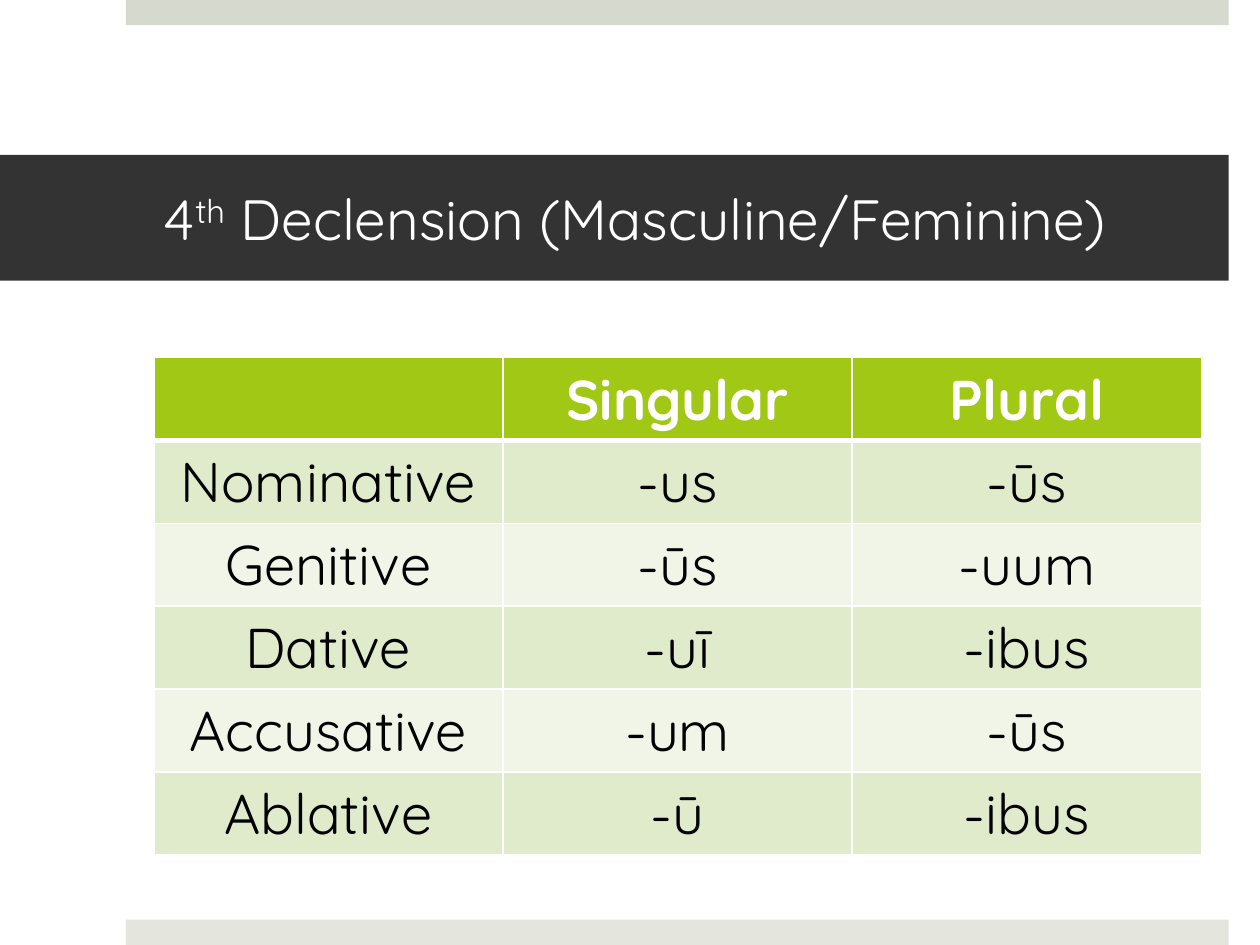
import dataclasses

import lxml.etree
import pptx
import pptx.dml.color
import pptx.enum.shapes
import pptx.enum.text
import pptx.oxml.ns
import pptx.util

Cm = pptx.util.Cm
Pt = pptx.util.Pt
RGBColor = pptx.dml.color.RGBColor
ALIGN = pptx.enum.text.PP_ALIGN
MIDDLE = pptx.enum.text.MSO_ANCHOR.MIDDLE

FONT = "Quicksand"
WHITE = RGBColor(0xFF, 0xFF, 0xFF)
BLACK = RGBColor(0x00, 0x00, 0x00)
CHARCOAL = RGBColor(0x33, 0x33, 0x33)
TOP_GREY = RGBColor(0xD6, 0xD9, 0xCD)
BOTTOM_GREY = RGBColor(0xE4, 0xE6, 0xDE)
LIME = RGBColor(0xA2, 0xC8, 0x16)
BANDS = (RGBColor(0xE0, 0xEB, 0xCC), RGBColor(0xF0, 0xF5, 0xE8))

COLUMN_WIDTH = Cm(7.04)
ROW_HEIGHT = Cm(1.67)
DECLENSION = [
    ("", "Singular", "Plural"),
    ("Nominative", "-us", "-ūs"),
    ("Genitive", "-ūs", "-uum"),
    ("Dative", "-uī", "-ibus"),
    ("Accusative", "-um", "-ūs"),
    ("Ablative", "-ū", "-ibus"),
]


@dataclasses.dataclass(frozen=True)
class Bar:
    top: pptx.util.Length
    color: RGBColor


BARS = [Bar(Cm(0), TOP_GREY), Bar(Cm(18.54), BOTTOM_GREY)]


def add_text(paragraph, text: str, *, size: float, color: RGBColor,
             bold: bool = False, align=ALIGN.LEFT, raised: int = 0) -> None:
    """Append a run; raised is the superscript offset in percent."""
    paragraph.alignment = align
    run = paragraph.add_run()
    run.text = text
    run.font.name = FONT
    run.font.size = Pt(size)
    run.font.bold = bold
    run.font.color.rgb = color
    if raised:
        run.font._element.set("baseline", str(raised * 1000))


def draw_bar(slide, bar: Bar) -> None:
    strip = slide.shapes.add_shape(pptx.enum.shapes.MSO_SHAPE.RECTANGLE,
                                   Cm(2.54), bar.top, Cm(22.23), Cm(0.51))
    strip.shadow.inherit = False
    strip.fill.solid()
    strip.fill.fore_color.rgb = bar.color
    strip.line.fill.background()


def draw_title(slide) -> None:
    title = slide.shapes.title
    title.left, title.top, title.width, title.height = Cm(0), Cm(3.12), Cm(24.77), Cm(2.54)
    title.fill.solid()
    title.fill.fore_color.rgb = CHARCOAL
    frame = title.text_frame
    frame.word_wrap = True
    frame.auto_size = pptx.enum.text.MSO_AUTO_SIZE.NONE
    frame.vertical_anchor = MIDDLE
    frame.margin_left, frame.margin_right = Cm(3.3), Cm(0.76)
    frame.margin_top = frame.margin_bottom = Cm(0.13)
    for text, raised in (("4", 0), ("th", 30), (" Declension (Masculine/Feminine)", 0)):
        add_text(frame.paragraphs[0], text, size=32.4, color=WHITE, raised=raised)


def set_borders(cell, *, top: float = 1, bottom: float = 1) -> None:
    properties = cell._tc.get_or_add_tcPr()
    qn = pptx.oxml.ns.qn
    sides = (("lnL", 1), ("lnR", 1), ("lnT", top), ("lnB", bottom))
    for position, (side, width) in enumerate(sides):
        line = lxml.etree.Element(qn(f"a:{side}"), w=str(Pt(width)))
        fill = lxml.etree.SubElement(line, qn("a:solidFill"))
        lxml.etree.SubElement(fill, qn("a:srgbClr"), val=str(WHITE))
        properties.insert(position, line)


def draw_declension(slide) -> None:
    rows, columns = len(DECLENSION), len(DECLENSION[0])
    table = slide.shapes.add_table(rows, columns, Cm(3.1), Cm(7.21),
                                   COLUMN_WIDTH * columns, ROW_HEIGHT * rows).table
    for column in table.columns:
        column.width = COLUMN_WIDTH
    for index, endings in enumerate(DECLENSION):
        header = index == 0
        table.rows[index].height = ROW_HEIGHT
        for cell, ending in zip(table.rows[index].cells, endings):
            cell.fill.solid()
            cell.fill.fore_color.rgb = LIME if header else BANDS[(index - 1) % 2]
            set_borders(cell, top=3 if index == 1 else 1, bottom=3 if header else 1)
            if ending:
                add_text(cell.text_frame.paragraphs[0], ending, size=32, bold=header,
                         color=WHITE if header else BLACK, align=ALIGN.CENTER)


def main() -> None:
    presentation = pptx.Presentation()
    presentation.slide_width, presentation.slide_height = Cm(25.4), Cm(19.05)
    slide = presentation.slides.add_slide(presentation.slide_layouts[5])

    # Strips at the top and bottom edges
    for bar in BARS:
        draw_bar(slide, bar)

    # Title band and table of endings
    draw_title(slide)
    draw_declension(slide)

    presentation.save("out.pptx")


if __name__ == "__main__":
    main()
